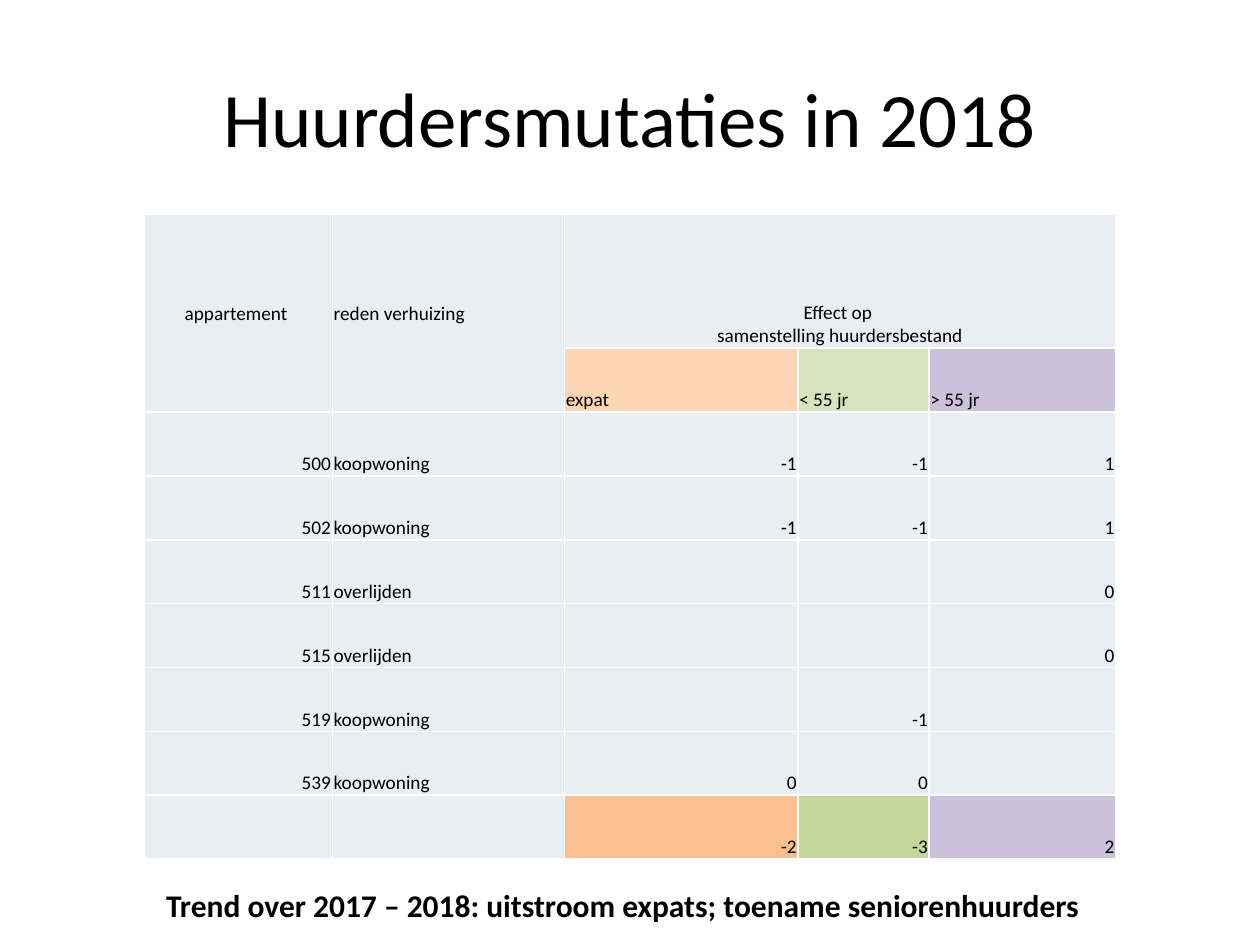
from dataclasses import dataclass
from typing import Any

from lxml import etree
from pptx import Presentation
from pptx import util as u
from pptx.dml.color import RGBColor
from pptx.enum import text as t
from pptx.oxml import ns

HUES = {
    "ink": "000000", "line": "FFFFFF", "base": "E9EDF4",
    "peach": "FCD5B5", "lime": "D7E4BD", "lilac": "CCC1DA",
    "orange": "FAC090", "green": "C3D69B",
}
LEFT, MID, RIGHT = t.PP_ALIGN.LEFT, t.PP_ALIGN.CENTER, t.PP_ALIGN.RIGHT
WIDTHS = [107.5, 132.7, 133.4, 75, 106.5]
HEIGHTS = [76.4] + [36.5] * 8
PAD = {"margin_left": u.Pt(0.75), "margin_right": u.Pt(0.75),
       "margin_top": u.Pt(0.75), "margin_bottom": 0}
MOVES = [
    ("500", "koopwoning", "-1", "-1", "1"),
    ("502", "koopwoning", "-1", "-1", "1"),
    ("511", "overlijden", "", "", "0"),
    ("515", "overlijden", "", "", "0"),
    ("519", "koopwoning", "", "-1", ""),
    ("539", "koopwoning", "0", "0", ""),
]


@dataclass
class Entry:
    row: int
    col: int
    words: str
    hue: str = "base"
    align: Any = RIGHT
    anchor: Any = t.MSO_ANCHOR.BOTTOM
    down: int = 1
    wide: int = 1


def apply(item: Any, traits: dict) -> None:
    for name, value in traits.items():
        setattr(item, name, value)


def style(frame: Any, size: float, align: Any, bold: bool = False) -> None:
    for para in frame.paragraphs:
        para.alignment = align
        for run in para.runs:
            apply(run.font, {"name": "Calibri", "size": u.Pt(size), "bold": bold})
            run.font.color.rgb = RGBColor.from_string(HUES["ink"])


def edge(cell: Any) -> None:
    props = cell._tc.get_or_add_tcPr()
    for side in ("lnL", "lnR", "lnT", "lnB"):
        line = etree.SubElement(props, ns.qn("a:" + side), w=str(u.Pt(1)))
        fill = etree.SubElement(line, ns.qn("a:solidFill"))
        etree.SubElement(fill, ns.qn("a:srgbClr"), val=HUES["line"])


def draw(table: Any, entry: Entry) -> None:
    cell = table.cell(entry.row, entry.col)
    if entry.down > 1 or entry.wide > 1:
        cell.merge(table.cell(entry.row + entry.down - 1,
                              entry.col + entry.wide - 1))
    apply(cell, {"text": entry.words, "vertical_anchor": entry.anchor, **PAD})
    cell.fill.solid()
    cell.fill.fore_color.rgb = RGBColor.from_string(HUES[entry.hue])
    style(cell.text_frame, 11, entry.align)


def entries() -> list[Entry]:
    middle = t.MSO_ANCHOR.MIDDLE
    cells = [
        Entry(0, 0, "appartement ", align=MID, anchor=middle, down=2),
        Entry(0, 1, "reden verhuizing", align=LEFT, anchor=middle, down=2),
        Entry(0, 2, "Effect op \vsamenstelling huurdersbestand", align=MID, wide=3),
        Entry(1, 2, "expat", "peach", LEFT),
        Entry(1, 3, "< 55 jr", "lime", LEFT),
        Entry(1, 4, "> 55 jr", "lilac", LEFT),
    ]
    for row, move in enumerate(MOVES, 2):
        for col, words in enumerate(move):
            cells.append(Entry(row, col, words, align=LEFT if col == 1 else RIGHT))
    sums = ["", "", "-2", "-3", "2"]
    hues = ["base", "base", "orange", "green", "lilac"]
    for col, (words, hue) in enumerate(zip(sums, hues)):
        cells.append(Entry(8, col, words, hue))
    return cells


def main() -> None:
    deck = Presentation()
    apply(deck, {"slide_width": u.Pt(720), "slide_height": u.Pt(540)})
    slide = deck.slides.add_slide(deck.slide_layouts[5])

    title = slide.shapes.title
    apply(title, {"left": u.Pt(36), "top": u.Pt(21.6),
                  "width": u.Pt(648), "height": u.Pt(90)})
    title.text_frame.text = "Huurdersmutaties in 2018"
    title.text_frame.vertical_anchor = t.MSO_ANCHOR.MIDDLE
    style(title.text_frame, 44, MID)

    table = slide.shapes.add_table(
        len(HEIGHTS), len(WIDTHS), u.Pt(82.4), u.Pt(122.6),
        u.Pt(sum(WIDTHS)), u.Pt(sum(HEIGHTS))).table
    apply(table, {"first_row": False, "horz_banding": False})
    for col, width in zip(table.columns, WIDTHS):
        col.width = u.Pt(width)
    for row, height in zip(table.rows, HEIGHTS):
        row.height = u.Pt(height)
    for cell in table.iter_cells():
        edge(cell)
    for entry in entries():
        draw(table, entry)

    trend = slide.shapes.add_textbox(u.Pt(87.8), u.Pt(502.6),
                                     u.Pt(544.4), u.Pt(29)).text_frame
    apply(trend, {
        "text": "Trend over 2017 – 2018: uitstroom expats; toename seniorenhuurders",
        "word_wrap": True, "auto_size": t.MSO_AUTO_SIZE.SHAPE_TO_FIT_TEXT})
    style(trend, 18, LEFT, True)
    deck.save("out.pptx")


if __name__ == "__main__":
    main()
